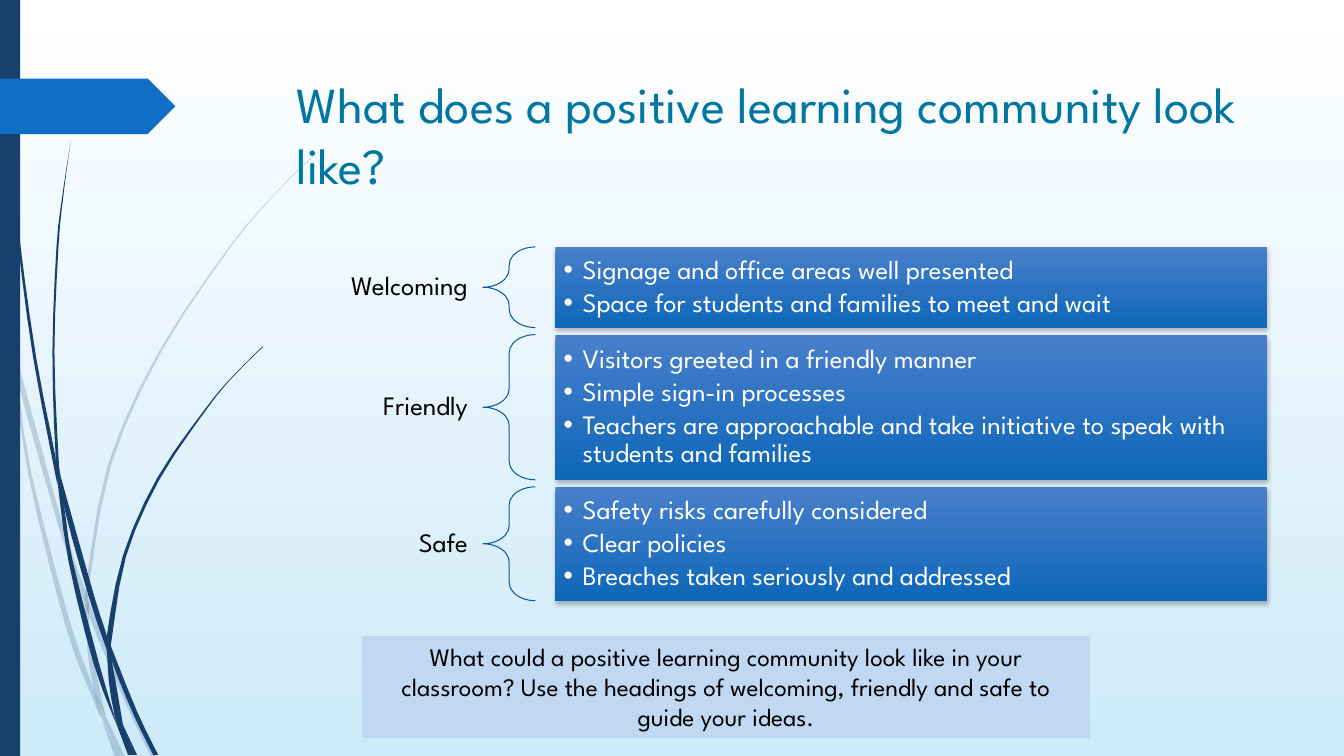
from lxml.etree import SubElement
from pptx import Presentation
from pptx.dml.color import RGBColor
from pptx.enum.shapes import MSO_SHAPE as SHAPE
from pptx.enum.text import MSO_ANCHOR as ANCHOR, PP_ALIGN as ALIGN
from pptx.oxml.ns import qn
from pptx.util import Inches, Pt

FONT = "League Spartan"
WHITE = RGBColor(0xFF, 0xFF, 0xFF)
BLACK = RGBColor(0x00, 0x00, 0x00)
SKY = RGBColor(0xCE, 0xEA, 0xF9)
NAVY = RGBColor(0x17, 0x40, 0x6D)
ARROW_BLUE = RGBColor(0x0F, 0x6F, 0xC6)
TITLE_BLUE = RGBColor(0x00, 0x76, 0xA3)
BRACE_BLUE = RGBColor(0x0C, 0x59, 0x9F)
BOX_TOP = RGBColor(0x48, 0x7F, 0xCB)
BOX_BOTTOM = RGBColor(0x0E, 0x67, 0xB8)
PROMPT_BLUE = RGBColor(0xC1, 0xD8, 0xF2)


def smooth(knots, steps=3):
    """Points of a Catmull-Rom curve through the knots."""
    ends = [knots[0], *knots, knots[-1]]
    points = []
    for a, b, c, d in zip(ends, ends[1:], ends[2:], ends[3:]):
        for t in [step / steps for step in range(steps)]:
            points.append(tuple(
                Inches(q + t * (r - p) / 2 + t * t * (2 * p - 5 * q + 4 * r - s) / 2
                       + t ** 3 * (3 * q - p - 3 * r + s) / 2)
                for p, q, r, s in zip(a, b, c, d)))
    return points + [tuple(Inches(v) for v in knots[-1])]


def write(paragraph, text, size, color, align=ALIGN.LEFT):
    paragraph.alignment = align
    run = paragraph.add_run()
    run.text = text
    run.font.name = FONT
    run.font.size = Pt(size)
    run.font.color.rgb = color


prs = Presentation()
prs.slide_width, prs.slide_height = Inches(13.33), Inches(7.5)
slide = prs.slides.add_slide(prs.slide_layouts[5])
shapes = slide.shapes

# Background
sky = slide.background.fill
sky.gradient()
sky.gradient_angle = 270
for stop, color in zip(sky.gradient_stops, (WHITE, SKY)):
    stop.color.rgb = color

# Grass blades in sections, each with its left and right edge from top to bottom
pale_blades = [
    ([(0, 2.82), (0, 2.99), (0.1, 3.44), (0.11, 3.5)], [(0, 2.82), (0.09, 3.22), (0.11, 3.5)]),
    ([(0.14, 3.45), (0.17, 3.76), (0.58, 5.22), (0.84, 5.99)],
     [(0.14, 3.45), (0.62, 5.2), (0.85, 5.86)]),
    ([(0.88, 5.96), (0.88, 6.1), (1.23, 6.94), (1.5, 7.51)],
     [(0.88, 5.96), (0.92, 6.07), (1.27, 6.92), (1.55, 7.51)]),
    ([(1.05, 7.11), (1.19, 7.51)], [(1.05, 7.11), (1.24, 7.51)]),
    ([(0.11, 3.5), (0.28, 4.7), (0.65, 6.21), (0.92, 6.93), (1.01, 7.14)],
     [(0.11, 3.5), (0.17, 3.76), (0.31, 4.69), (0.7, 6.19), (0.93, 6.83), (1.01, 7.14)]),
    ([(0.84, 5.99), (0.87, 6.46), (0.93, 6.83), (1.05, 7.11)],
     [(0.84, 5.99), (0.88, 6.1), (0.91, 6.46), (1.05, 7.11)]),
    ([(3.12, 1.53), (2.89, 1.75), (2.68, 1.97), (2.28, 2.44), (1.58, 3.48), (1.07, 4.61),
      (0.85, 5.84), (0.88, 5.96)],
     [(3.12, 1.54), (2.9, 1.75), (2.68, 1.98), (2.29, 2.45), (1.6, 3.49), (1.1, 4.62),
      (0.88, 5.84), (0.88, 5.96)]),
    ([(1.01, 7.14), (1.14, 7.51)], [(1.01, 7.14), (1.19, 7.51)]),
    ([(0.85, 5.86), (0.84, 5.99), (0.88, 6.1)], [(0.85, 5.86), (0.88, 5.96), (0.88, 6.1)]),
    ([(0.93, 6.83), (0.99, 7.07), (1.19, 7.51)], [(0.93, 6.83), (1.05, 7.11), (1.19, 7.51)]),
]
dark_blades = [
    ([(0.03, 0), (0.04, 0.48), (0.07, 1.1), (0.17, 2.33), (0.33, 3.55), (0.57, 4.81)],
     [(0.04, 0), (0.05, 0.48), (0.08, 1.09), (0.19, 2.32), (0.36, 3.55), (0.55, 4.53),
      (0.57, 4.81)]),
    ([(0.6, 4.72), (0.64, 5.05), (0.88, 5.92), (1.06, 6.45)],
     [(0.6, 4.72), (0.93, 5.9), (1.06, 6.31), (1.06, 6.45)]),
    ([(1.1, 6.41), (1.11, 6.56), (1.32, 7.08), (1.52, 7.49)],
     [(1.1, 6.41), (1.36, 7.06), (1.57, 7.49)]),
    ([(0.57, 4.77), (0.68, 5.57), (0.93, 6.59), (1.17, 7.22)],
     [(0.57, 4.77), (0.64, 5.05), (0.72, 5.56), (0.98, 6.57), (1.17, 7.22)]),
    ([(0.7, 1.41), (0.62, 1.93), (0.56, 2.45), (0.52, 3.49), (0.55, 4.49), (0.6, 4.72)],
     [(0.7, 1.41), (0.63, 1.93), (0.58, 2.45), (0.54, 3.49), (0.58, 4.53), (0.6, 4.72)]),
    ([(1.22, 7.19), (1.33, 7.49)], [(1.22, 7.19), (1.36, 7.49)]),
    ([(0.55, 4.49), (0.57, 4.77), (0.64, 5.05)], [(0.55, 4.49), (0.6, 4.72), (0.64, 5.05)]),
    ([(2.6, 3.44), (2.31, 3.73), (2.04, 4.05), (1.56, 4.74), (1.22, 5.51), (1.06, 6.31),
      (1.1, 6.41)],
     [(2.61, 3.44), (2.31, 3.74), (2.05, 4.06), (1.58, 4.76), (1.25, 5.52), (1.11, 6.33),
      (1.1, 6.41)]),
    ([(1.17, 7.22), (1.27, 7.49)], [(1.17, 7.22), (1.31, 7.49)]),
    ([(1.06, 6.45), (1.1, 6.91), (1.22, 7.19)], [(1.06, 6.45), (1.11, 6.56), (1.22, 7.19)]),
    ([(1.06, 6.31), (1.06, 6.45), (1.11, 6.56)], [(1.06, 6.31), (1.1, 6.41), (1.11, 6.56)]),
    ([(1.1, 6.91), (1.17, 7.22), (1.3, 7.49)], [(1.1, 6.91), (1.22, 7.19), (1.33, 7.49)]),
]
for blades, opacity in ((pale_blades, 20), (dark_blades, 100)):
    for left_edge, right_edge in blades:
        outline = smooth(left_edge) + smooth(right_edge)[::-1]
        builder = shapes.build_freeform(*outline[0])
        builder.add_line_segments(outline[1:], close=True)
        blade = builder.convert_to_shape()
        blade.shadow.inherit = False
        blade.line.fill.background()
        blade.fill.solid()
        blade.fill.fore_color.rgb = NAVY
        tint = blade._element.spPr.find(qn("a:solidFill"))[0]
        SubElement(tint, qn("a:alpha"), val=str(opacity * 1000))

# Side bar and arrow tab
for kind, top, width, height, color in ((SHAPE.RECTANGLE, 0, 0.2, 7.5, NAVY),
                                        (SHAPE.PENTAGON, 0.78, 1.74, 0.55, ARROW_BLUE)):
    accent = shapes.add_shape(kind, 0, Inches(top), Inches(width), Inches(height))
    accent.shadow.inherit = False
    accent.line.fill.background()
    accent.fill.solid()
    accent.fill.fore_color.rgb = color

# Title, in front of the blades
title = shapes.title
shapes._spTree.append(title._element)
title.left, title.top = Inches(2.84), Inches(0.68)
title.width, title.height = Inches(9.75), Inches(1.4)
title.text_frame.vertical_anchor = ANCHOR.TOP
write(title.text_frame.paragraphs[0],
      "What does a positive learning community look like?", 36, TITLE_BLUE)

# Qualities: label, brace and box of points
qualities = [
    ("Welcoming", 0.8, ["Signage and office areas well presented",
                        "Space for students and families to meet and wait"]),
    ("Friendly", 1.44, ["Visitors greeted in a friendly manner", "Simple sign-in processes",
                        "Teachers are approachable and take initiative to speak with "
                        "students and families"]),
    ("Safe", 1.13, ["Safety risks carefully considered", "Clear policies",
                    "Breaches taken seriously and addressed"]),
]
LABEL_HEIGHT, GAP = 0.41, 0.07
top = 2.45
for quality, height, points in qualities:
    label = shapes.add_textbox(Inches(2.19), Inches(top + (height - LABEL_HEIGHT) / 2),
                               Inches(2.6), Inches(LABEL_HEIGHT))
    frame = label.text_frame
    frame.word_wrap = True
    frame.vertical_anchor = ANCHOR.MIDDLE
    frame.margin_left = frame.margin_right = Inches(0.15)
    frame.paragraphs[0].line_spacing = 0.9
    write(frame.paragraphs[0], quality, 19, BLACK, ALIGN.RIGHT)

    brace = shapes.add_shape(SHAPE.LEFT_BRACE, Inches(4.79), Inches(top),
                             Inches(0.52), Inches(height))
    brace.adjustments[0] = 0.35
    brace.shadow.inherit = False
    brace.fill.background()
    brace.line.color.rgb = BRACE_BLUE
    brace.line.width = Pt(0.75)

    box = shapes.add_shape(SHAPE.RECTANGLE, Inches(5.51), Inches(top), Inches(7.06), Inches(height))
    box.line.fill.background()
    box.fill.gradient()
    box.fill.gradient_angle = 270
    for stop, color in zip(box.fill.gradient_stops, (BOX_TOP, BOX_BOTTOM)):
        stop.color.rgb = color
    box.shadow.inherit = False
    shadow = SubElement(box._element.spPr.find(qn("a:effectLst")), qn("a:outerShdw"),
                        blurRad=str(Pt(3)), dist=str(Pt(2)), dir="5400000", rotWithShape="0")
    shade = SubElement(shadow, qn("a:srgbClr"), val=str(BLACK))
    SubElement(shade, qn("a:alpha"), val="25000")

    frame = box.text_frame
    frame.word_wrap = True
    frame.margin_left = frame.margin_right = Inches(0.08)
    frame.margin_top = frame.margin_bottom = Inches(0.08)
    for index, point in enumerate(points):
        item = frame.add_paragraph() if index else frame.paragraphs[0]
        item.line_spacing = 0.9
        item.space_after = Pt(2.85)
        write(item, point, 19, WHITE)
        props = item._p.get_or_add_pPr()
        props.set("marL", str(Inches(0.19)))
        props.set("indent", str(Inches(-0.19)))
        SubElement(props, qn("a:buFont"), typeface="Arial")
        SubElement(props, qn("a:buChar"), char="•")
    top += height + GAP

# Question for the reader
prompt = shapes.add_textbox(Inches(3.59), Inches(6.31), Inches(7.22), Inches(1.01))
prompt.fill.solid()
prompt.fill.fore_color.rgb = PROMPT_BLUE
prompt.text_frame.word_wrap = True
write(prompt.text_frame.paragraphs[0],
      "What could a positive learning community look like in your classroom? "
      "Use the headings of welcoming, friendly and safe to guide your ideas.",
      18, BLACK, ALIGN.CENTER)

prs.save("out.pptx")
